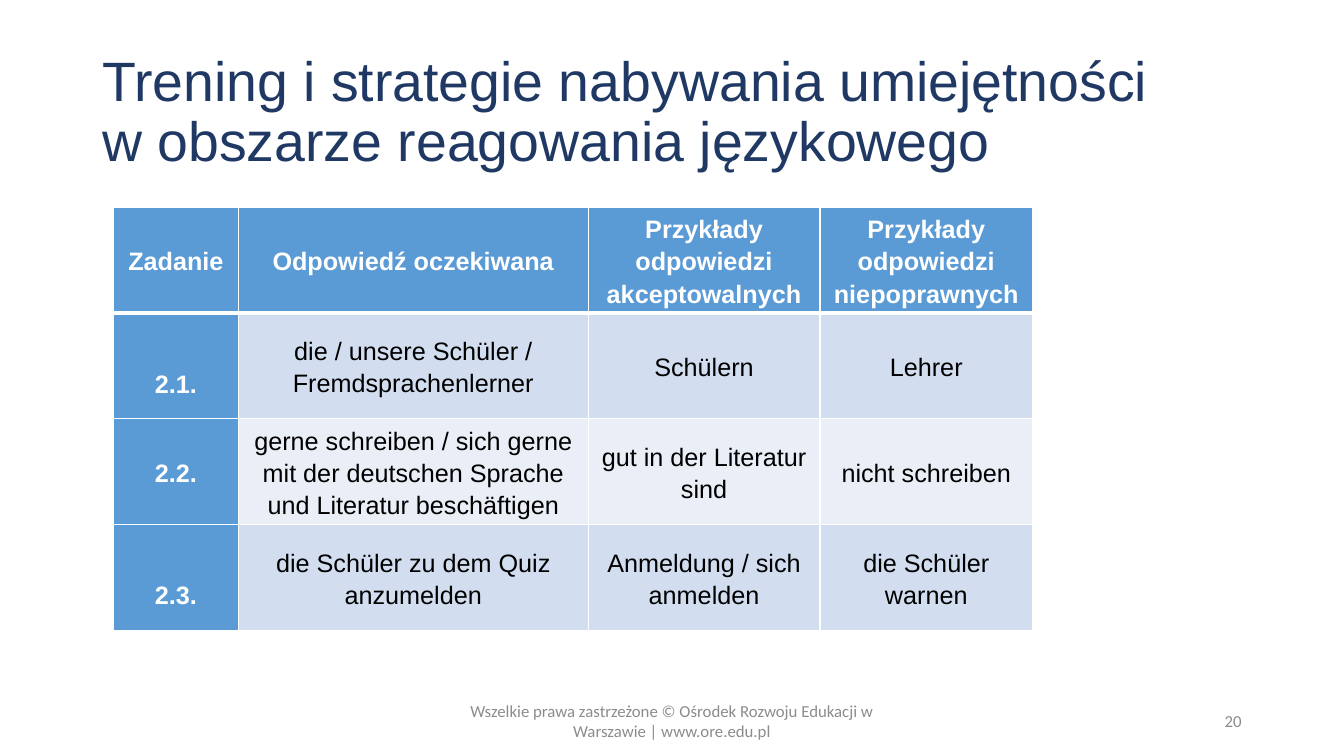
from pptx import Presentation
from pptx.dml.color import RGBColor
from pptx.enum.text import MSO_ANCHOR, PP_ALIGN
from pptx.oxml import parse_xml
from pptx.oxml.ns import nsdecls
from pptx.util import Pt

LEFT, CENTER, RIGHT = PP_ALIGN.LEFT, PP_ALIGN.CENTER, PP_ALIGN.RIGHT
MIDDLE = MSO_ANCHOR.MIDDLE

NAVY, BLUE, WHITE, BLACK, GRAY = "203864", "5B9BD5", "FFFFFF", "000000", "8C8C8C"
BANDS = ("D2DEEF", "EAEFF7")

TITLE_FONT = {"name": "Arial", "size": Pt(39.6), "bold": False}
TABLE_FONT = {"name": "Arial", "size": Pt(18)}
FOOTER_FONT = {"name": "Calibri", "size": Pt(12), "bold": False}

TITLE_LINES = [
    "Trening i strategie nabywania umiejętności",
    "w obszarze reagowania językowego",
]
ANSWERS = [
    ["Zadanie", "Odpowiedź oczekiwana", "Przykłady odpowiedzi akceptowalnych",
     "Przykłady odpowiedzi niepoprawnych"],
    ["2.1.", "die / unsere Schüler / Fremdsprachenlerner", "Schülern", "Lehrer"],
    ["2.2.", "gerne schreiben / sich gerne mit der deutschen Sprache und Literatur beschäftigen",
     "gut in der Literatur sind", "nicht schreiben"],
    ["2.3.", "die Schüler zu dem Quiz anzumelden", "Anmeldung / sich anmelden",
     "die Schüler warnen"],
]
COLUMN_WIDTHS = (89.3, 249.8, 165.6, 151.9)
LOWERED_ROWS = (1, 3)
LOWERED_MARGIN = 23.5
FOOTER_TEXT = ("Wszelkie prawa zastrzeżone © Ośrodek Rozwoju Edukacji w Warszawie"
               " | www.ore.edu.pl")


def color(value):
    return RGBColor.from_string(value)


def set_attributes(target, values):
    for name, value in values.items():
        setattr(target, name, value)


def write_paragraph(text_frame, lines, font, font_color, alignment, spacing):
    paragraph = text_frame.paragraphs[0]
    set_attributes(paragraph, {"alignment": alignment, "line_spacing": spacing})
    for index, line in enumerate(lines):
        if index:
            paragraph.add_line_break()
        run = paragraph.add_run()
        run.text = line
        set_attributes(run.font, font)
        run.font.color.rgb = color(font_color)


def add_text(slide, box, lines, font, font_color, alignment=LEFT, spacing=1.0):
    shape = slide.shapes.add_textbox(*map(Pt, box))
    set_attributes(shape.text_frame, {"word_wrap": True, "vertical_anchor": MIDDLE})
    write_paragraph(shape.text_frame, lines, font, font_color, alignment, spacing)


def set_borders(cell, widths):
    properties = cell._tc.get_or_add_tcPr()
    for index, (side, width) in enumerate(widths.items()):
        properties.insert(index, parse_xml(
            f'<a:ln{side} {nsdecls("a")} w="{Pt(width)}"><a:solidFill>'
            f'<a:srgbClr val="{WHITE}"/></a:solidFill></a:ln{side}>'))


def format_cell(cell, text, row, column):
    accent = row == 0 or column == 0
    lowered = column == 0 and row in LOWERED_ROWS
    set_attributes(cell, {
        "vertical_anchor": MIDDLE,
        "margin_left": Pt(5),
        "margin_right": Pt(5),
        "margin_top": Pt(LOWERED_MARGIN if lowered else 0),
        "margin_bottom": Pt(0),
    })
    cell.fill.solid()
    cell.fill.fore_color.rgb = color(BLUE if accent else BANDS[(row - 1) % 2])
    set_borders(cell, {"L": 1, "R": 1, "T": 3 if row == 1 else 1, "B": 3 if row == 0 else 1})
    write_paragraph(cell.text_frame, [text], {**TABLE_FONT, "bold": accent},
                    WHITE if accent else BLACK, CENTER, 1.15)


def add_answer_table(slide, box):
    frame = slide.shapes.add_table(len(ANSWERS), len(COLUMN_WIDTHS), *map(Pt, box))
    table = frame.table
    for column, width in zip(table.columns, COLUMN_WIDTHS):
        column.width = Pt(width)
    for row, texts in enumerate(ANSWERS):
        table.rows[row].height = Pt(box[3] / len(ANSWERS))
        for column, text in enumerate(texts):
            format_cell(table.cell(row, column), text, row, column)


def add_footer(slide, box):
    left, top, width, height = box
    add_text(slide, (left, top, 324, height), [FOOTER_TEXT], FOOTER_FONT, GRAY, CENTER)
    add_text(slide, (left + width - 216, top, 216, height), ["20"], FOOTER_FONT, GRAY, RIGHT)


def main():
    presentation = Presentation()
    set_attributes(presentation, {"slide_width": Pt(960), "slide_height": Pt(540)})
    slide = presentation.slides.add_slide(presentation.slide_layouts[6])
    add_text(slide, (66, 28.75, 828, 104.4), TITLE_LINES, TITLE_FONT, NAVY, spacing=0.9)
    add_answer_table(slide, (81, 148, sum(COLUMN_WIDTHS), 302.4))
    add_footer(slide, (318, 500.5, 576, 28.75))
    presentation.save("out.pptx")


if __name__ == "__main__":
    main()
